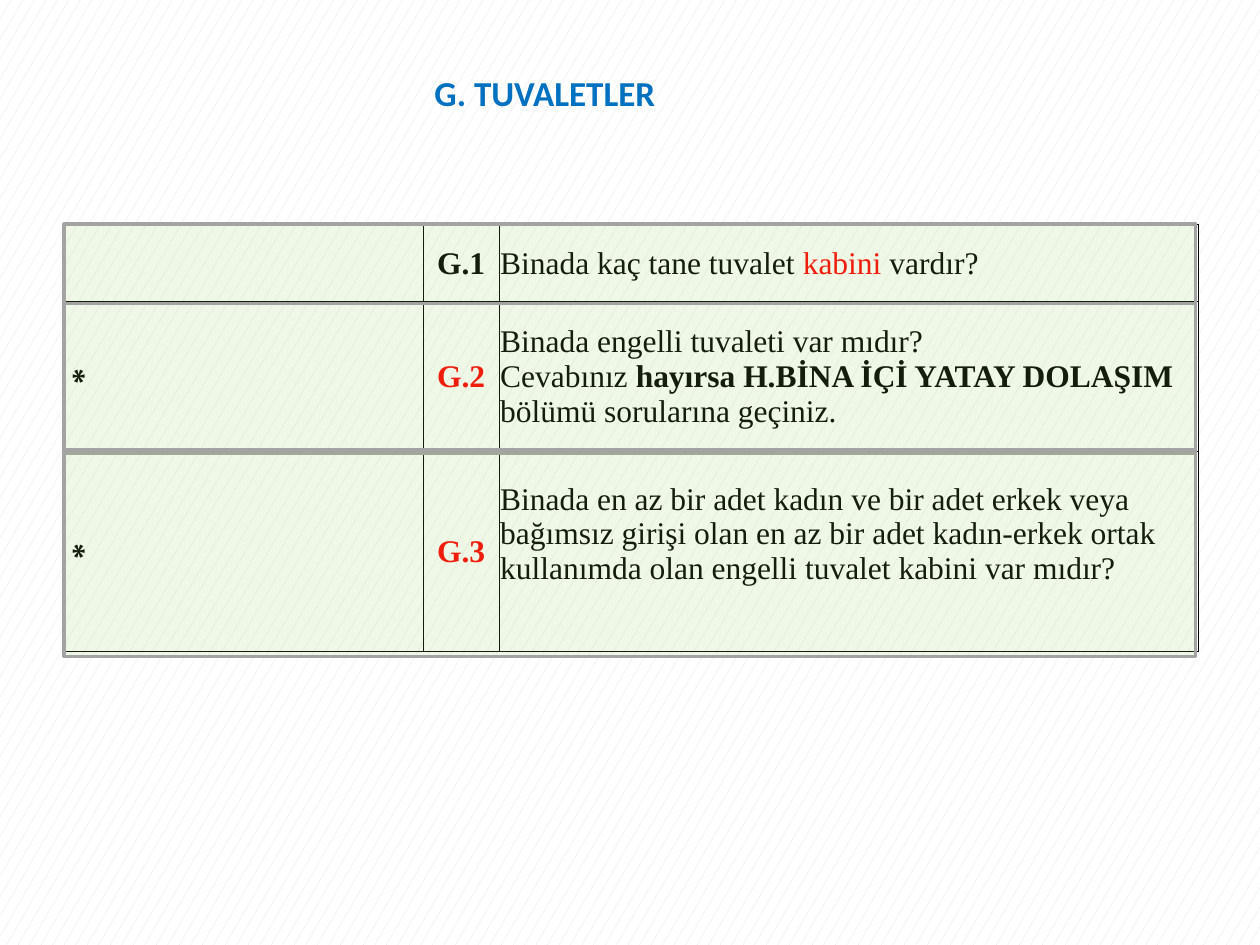
from dataclasses import dataclass

from lxml.etree import SubElement
from pptx import Presentation
from pptx.dml.color import RGBColor
from pptx.enum.dml import MSO_PATTERN
from pptx.enum.shapes import MSO_SHAPE
from pptx.enum.text import MSO_ANCHOR, MSO_AUTO_SIZE, PP_ALIGN
from pptx.oxml import parse_xml
from pptx.oxml.ns import nsdecls, qn
from pptx.util import Inches, Pt


@dataclass(frozen=True)
class Theme:
    """Colours, fonts and sizes of the slide."""
    blue: str = "0070C0"
    black: str = "000000"
    red: str = "FF0000"
    green: str = "92D050"
    grey: str = "A3A3A3"
    white: str = "FFFFFF"
    pattern: str = "E0E0E0"
    title_font: str = "Calibri"
    body_font: str = "Times New Roman"
    title_size: int = 20
    body_size: int = 18


THEME = Theme()
COLUMN_WIDTHS = (2.85, 0.6, 5.55)
ROW_HEIGHTS = (0.61, 1.19, 1.59)
BANDS = ((0, 0.63), (0.63, 1.19), (1.79, 1.64))
BLACK, RED = (THEME.black, False), (THEME.red, False)
BOLD, BOLD_RED = (THEME.black, True), (THEME.red, True)
QUESTIONS = (
    ("", ("G.1", BOLD), [[("Binada kaç tane tuvalet", BLACK), (" kabini ", RED),
                          ("vardır?", BLACK)]]),
    ("*", ("G.2", BOLD_RED), [
        [("Binada engelli tuvaleti var mıdır?", BLACK)],
        [("Cevabınız ", BLACK), ("hayırsa H.BİNA İÇİ YATAY DOLAŞIM", BOLD),
         (" bölümü sorularına geçiniz.", BLACK)]]),
    ("*", ("G.3", BOLD_RED), [
        [("Binada en az bir adet kadın ve bir adet erkek veya bağımsız girişi "
          "olan en az bir adet kadın-erkek ortak kullanımda olan engelli "
          "tuvalet kabini var mıdır?", BLACK)]]),
)


def rgb(value):
    """Return a colour from its hex value."""
    return RGBColor.from_string(value)


def add_run(paragraph, text, color, bold, font=THEME.body_font, size=THEME.body_size):
    """Add one formatted run to a paragraph."""
    run = paragraph.add_run()
    run.text = text
    run.font.name = font
    run.font.size = Pt(size)
    run.font.bold = bold
    run.font.color.rgb = rgb(color)


def add_title(slide, left, top, width, height):
    """Place the section heading."""
    box = slide.shapes.add_textbox(Inches(left), Inches(top), Inches(width), Inches(height))
    box.text_frame.word_wrap = False
    box.text_frame.auto_size = MSO_AUTO_SIZE.SHAPE_TO_FIT_TEXT
    add_run(box.text_frame.paragraphs[0], "G. TUVALETLER", THEME.blue, True,
            THEME.title_font, THEME.title_size)


def style_cell(cell):
    """Give a cell thin borders, no fill and narrow margins."""
    cell.fill.background()
    cell.vertical_anchor = MSO_ANCHOR.MIDDLE
    cell.margin_left = cell.margin_right = cell.margin_top = Inches(0.01)
    cell.margin_bottom = 0
    properties = cell._tc.get_or_add_tcPr()
    for index, side in enumerate("LRTB"):
        properties.insert(index, parse_xml(
            f'<a:ln{side} {nsdecls("a")} w="{Pt(0.5)}"><a:solidFill>'
            f'<a:srgbClr val="{THEME.black}"/></a:solidFill></a:ln{side}>'))


def fill_cell(cell, paragraphs, alignment):
    """Write paragraphs of runs into a cell."""
    frame = cell.text_frame
    for index, runs in enumerate(paragraphs):
        paragraph = frame.add_paragraph() if index else frame.paragraphs[0]
        paragraph.alignment = alignment
        for text, (color, bold) in runs:
            add_run(paragraph, text, color, bold)


def add_questions(slide, left, top):
    """Place the table of questions."""
    table = slide.shapes.add_table(
        len(ROW_HEIGHTS), len(COLUMN_WIDTHS), Inches(left), Inches(top),
        Inches(sum(COLUMN_WIDTHS)), Inches(sum(ROW_HEIGHTS))).table
    table.first_row = table.horz_banding = False
    for column, width in zip(table.columns, COLUMN_WIDTHS):
        column.width = Inches(width)
    for row, height, (mark, code, question) in zip(table.rows, ROW_HEIGHTS, QUESTIONS):
        row.height = Inches(height)
        for cell in row.cells:
            style_cell(cell)
        mark_cell, code_cell, question_cell = row.cells
        if mark:
            mark_cell._tc.get_or_add_tcPr().set("vert", "vert270")
            fill_cell(mark_cell, [[(mark, BOLD)]], PP_ALIGN.CENTER)
        fill_cell(code_cell, [[code]], PP_ALIGN.CENTER)
        fill_cell(question_cell, question, PP_ALIGN.LEFT)
    table.cell(2, 2).margin_bottom = Inches(0.28)


def add_bands(slide, left, top, width):
    """Lay a translucent frame over each question."""
    for offset, height in BANDS:
        band = slide.shapes.add_shape(
            MSO_SHAPE.RECTANGLE, Inches(left), Inches(top + offset),
            Inches(width), Inches(height))
        band.shadow.inherit = False
        band.fill.solid()
        band.fill.fore_color.rgb = rgb(THEME.green)
        color = band.fill._xPr.find(qn("a:solidFill"))[0]
        SubElement(color, qn("a:alpha"), val="14000")
        band.line.color.rgb = rgb(THEME.grey)
        band.line.width = Pt(2)


def add_background(slide):
    """Cover the slide with a pale pattern."""
    fill = slide.background.fill
    fill.patterned()
    fill.pattern = MSO_PATTERN.SMALL_CONFETTI
    fill.fore_color.rgb = rgb(THEME.pattern)
    fill.back_color.rgb = rgb(THEME.white)


def main():
    """Build and save the slide."""
    presentation = Presentation()
    presentation.slide_width, presentation.slide_height = Inches(10), Inches(7.5)
    slide = presentation.slides.add_slide(presentation.slide_layouts[6])
    add_background(slide)
    add_title(slide, 3.35, 0.52, 2.03, 0.44)
    add_questions(slide, 0.51, 1.78)
    add_bands(slide, 0.51, 1.78, 8.98)
    presentation.save("out.pptx")


if __name__ == "__main__":
    main()
